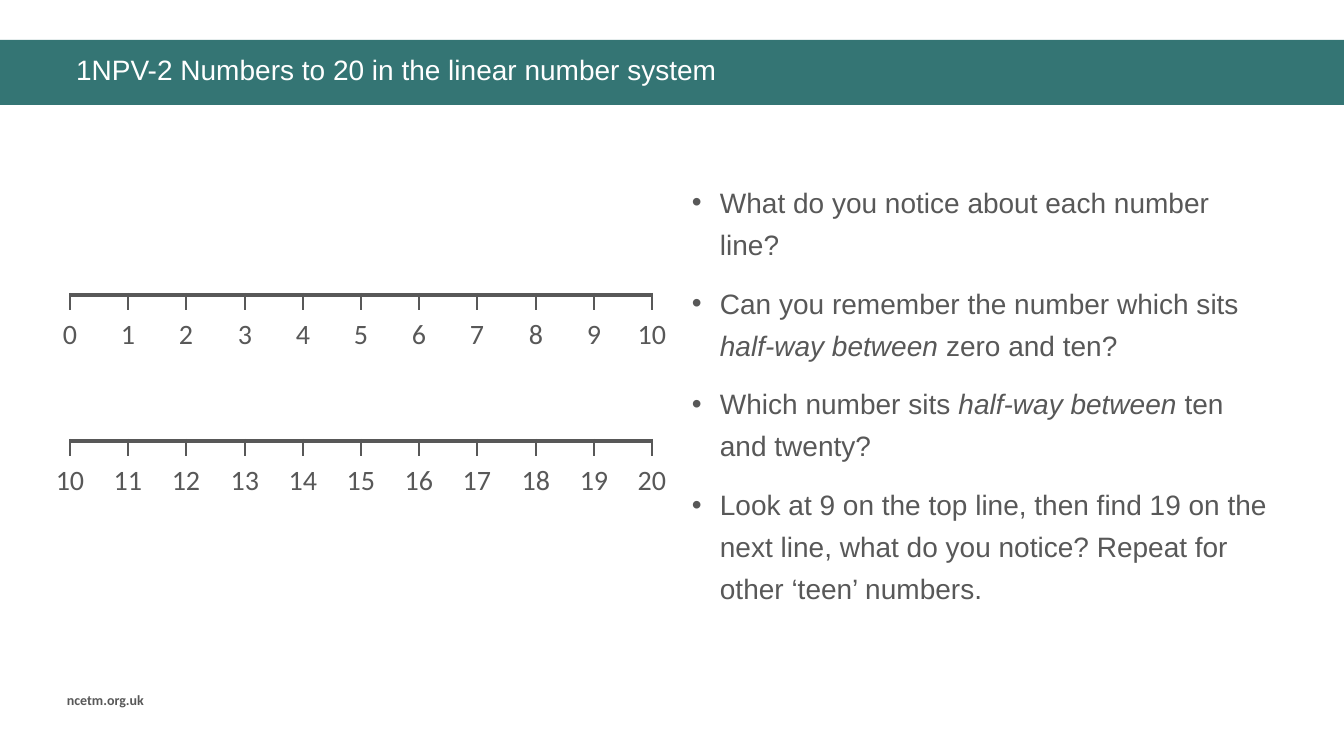
from lxml import etree
from pptx import Presentation
from pptx.dml.color import RGBColor
from pptx.enum.shapes import MSO_CONNECTOR as CONN, MSO_SHAPE as SHAPE
from pptx.enum.text import MSO_ANCHOR as ANCHOR, MSO_AUTO_SIZE as AUTO, PP_ALIGN as ALIGN
from pptx.oxml.ns import qn
from pptx.util import Pt

PX = 914400 / 100.8
COLORS = {"band": "347574", "ink": "585858", "title": "FFFFFF"}


def px(*lengths):
    return [round(n * PX) for n in lengths]


def style(font, name, size, color):
    font.name = name
    font.size = Pt(size)
    font.color.rgb = RGBColor.from_string(COLORS[color])


prs = Presentation()
prs.slide_width, prs.slide_height = px(1344, 756)
s = prs.slides.add_slide(prs.slide_layouts[5])

title = s.shapes.title
title.left, title.top, title.width, title.height = px(66, 51, 1242, 47)
tf = title.text_frame
tf.text = "1NPV-2 Numbers to 20 in the linear number system"
tf.auto_size = AUTO.NONE
tf.vertical_anchor = ANCHOR.TOP
p = tf.paragraphs[0]
p.alignment = ALIGN.LEFT
p.line_spacing = 0.9
style(p.runs[0].font, "Arial", 20, "title")

band = s.shapes.add_shape(SHAPE.RECTANGLE, *px(0, 40, 1344, 65))
band.shadow.inherit = False
band.fill.solid()
band.fill.fore_color.rgb = RGBColor.from_string(COLORS["band"])
band.line.fill.background()
title.element.addprevious(band.element)

footer = s.shapes.add_textbox(*px(57, 687, 122, 27))
footer.text_frame.text = "ncetm.org.uk"
r = footer.text_frame.paragraphs[0].runs[0]
style(r.font, "Calibri", 10, "ink")
r.font.bold = True

LEFT, LENGTH, STEPS = 70, 582, 10
LABEL_W = 52
for first, y in [(0, 295), (10, 441)]:
    group = s.shapes.add_group_shape()
    strokes = [(LEFT, y, LEFT + LENGTH, y, 2.25)]
    for i in range(STEPS + 1):
        x = LEFT + round(LENGTH * i / STEPS)
        strokes.append((x, y - 2, x, y + 15, 1 if i % 5 else 2))
        label = group.shapes.add_textbox(*px(x - LABEL_W // 2, y + 17, LABEL_W, 44))
        tf = label.text_frame
        tf.word_wrap = True
        tf.text = str(first + i)
        p = tf.paragraphs[0]
        p.alignment = ALIGN.CENTER
        style(p.runs[0].font, "Calibri", 20, "ink")
    for x1, y1, x2, y2, weight in strokes:
        line = group.shapes.add_connector(CONN.STRAIGHT, *px(x1, y1, x2, y2))
        line.line.color.rgb = RGBColor.from_string(COLORS["ink"])
        line.line.width = Pt(weight)
        etree.SubElement(line.element.spPr, qn("a:effectLst"))

QUESTIONS = [
    ["What do you notice about each number line?"],
    ["Can you remember the number which sits ", "half-way between ", "zero and ten?"],
    ["Which number sits ", "half-way between ", "ten and twenty?"],
    ["Look at 9 on the top line, then find 19 on the next line, what do you notice? "
     "Repeat for other ‘teen’ numbers."],
]
INDENT = px(28)[0]
questions = s.shapes.add_textbox(*px(682, 172, 602, 453))
tf = questions.text_frame
tf.word_wrap = True
for i, parts in enumerate(QUESTIONS):
    p = tf.add_paragraph() if i else tf.paragraphs[0]
    p.line_spacing = 1.25
    p.space_before = Pt(6 if i else 0)
    p.space_after = Pt(6)
    pPr = p._p.get_or_add_pPr()
    pPr.set("marL", str(INDENT))
    pPr.set("indent", str(-INDENT))
    bullet_color = etree.SubElement(pPr, qn("a:buClr"))
    etree.SubElement(bullet_color, qn("a:srgbClr"), val=COLORS["ink"])
    etree.SubElement(pPr, qn("a:buFont"), typeface="Arial")
    etree.SubElement(pPr, qn("a:buChar"), char="•")
    for j, part in enumerate(parts):
        r = p.add_run()
        r.text = part
        style(r.font, "Arial", 20, "ink")
        r.font.italic = j == 1

prs.save("out.pptx")
